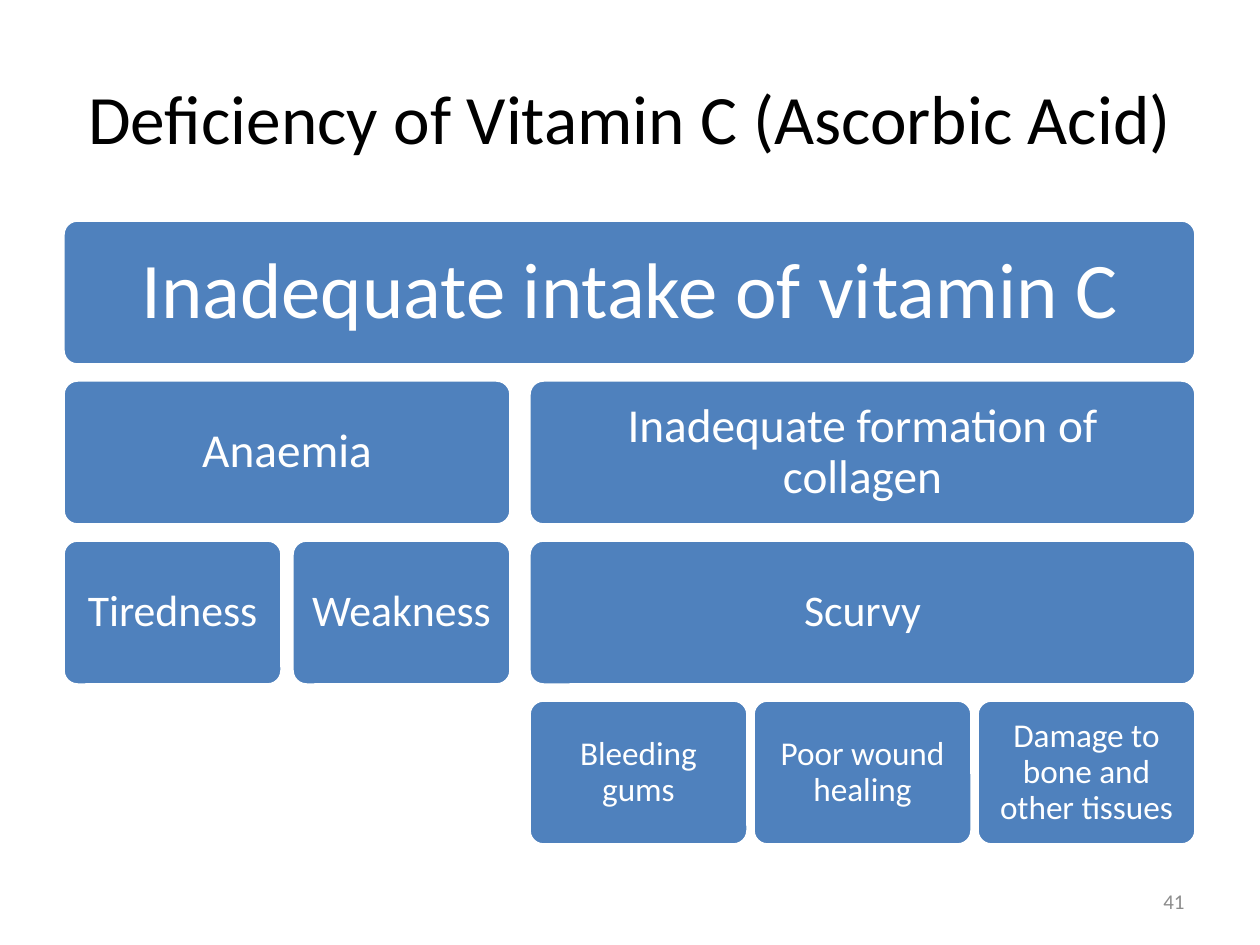
from dataclasses import dataclass
from typing import Any

import pptx
import pptx.dml.color
import pptx.enum.shapes
import pptx.enum.text
import pptx.util

EMU_PER_PX = 914400 / 126
ALIGN = pptx.enum.text.PP_ALIGN

# Grid of the hierarchy, in px
LEFT, TOP = 63, 220
ROW_PITCH, BOX_HEIGHT = 160, 145
LEAF_WIDTH = 219
SYMPTOM_PITCH, DAMAGE_PITCH = 229, 224
RIGHT_BRANCH = 529
ANAEMIA_WIDTH = SYMPTOM_PITCH + LEAF_WIDTH
COLLAGEN_WIDTH = 2 * DAMAGE_PITCH + LEAF_WIDTH
FULL_WIDTH = RIGHT_BRANCH + COLLAGEN_WIDTH - LEFT

# Font size (pt) and text inset (px) of each level
LEVEL_SIZES = (45, 27, 25, 19)
LEVEL_INSETS = (24, 14, 13, 10)


@dataclass
class Cause:
    text: str
    level: int
    left: int
    width: int


CAUSES = [
    Cause("Inadequate intake of vitamin C", 0, LEFT, FULL_WIDTH),
    Cause("Anaemia", 1, LEFT, ANAEMIA_WIDTH),
    Cause("Inadequate formation of collagen", 1, RIGHT_BRANCH, COLLAGEN_WIDTH),
    *(Cause(text, 2, LEFT + i * SYMPTOM_PITCH, LEAF_WIDTH)
      for i, text in enumerate(("Tiredness", "Weakness"))),
    Cause("Scurvy", 2, RIGHT_BRANCH, COLLAGEN_WIDTH),
    *(Cause(text, 3, RIGHT_BRANCH + i * DAMAGE_PITCH, LEAF_WIDTH)
      for i, text in enumerate(("Bleeding gums", "Poor wound healing",
                                "Damage to bone and other tissues"))),
]


def px(length: int) -> pptx.util.Emu:
    return pptx.util.Emu(round(length * EMU_PER_PX))


def colour(hex_value: str) -> pptx.dml.color.RGBColor:
    return pptx.dml.color.RGBColor.from_string(hex_value)


def apply_format(target: Any, values: dict[str, Any]) -> None:
    for name, value in values.items():
        setattr(target, name, value)


def write_text(shape: Any, text: str, size: float, hex_value: str,
               align: Any = ALIGN.CENTER) -> None:
    frame = shape.text_frame
    frame.text = text
    apply_format(frame, {
        "word_wrap": True,
        "auto_size": pptx.enum.text.MSO_AUTO_SIZE.NONE,
        "vertical_anchor": pptx.enum.text.MSO_ANCHOR.MIDDLE,
    })
    paragraph = frame.paragraphs[0]
    paragraph.alignment = align
    font = paragraph.runs[0].font
    apply_format(font, {"name": "Calibri", "size": pptx.util.Pt(size)})
    font.color.rgb = colour(hex_value)


def draw_cause(slide: Any, cause: Cause) -> None:
    box = slide.shapes.add_shape(
        pptx.enum.shapes.MSO_SHAPE.ROUNDED_RECTANGLE,
        px(cause.left), px(TOP + cause.level * ROW_PITCH),
        px(cause.width), px(BOX_HEIGHT))
    box.adjustments[0] = 0.1
    box.shadow.inherit = False
    box.fill.solid()
    box.fill.fore_color.rgb = colour("4F81BD")
    box.line.color.rgb = colour("FFFFFF")
    box.line.width = pptx.util.Pt(2)
    write_text(box, cause.text, LEVEL_SIZES[cause.level], "FFFFFF")
    inset = px(LEVEL_INSETS[cause.level])
    apply_format(box.text_frame, {
        f"margin_{side}": inset for side in ("left", "top", "right", "bottom")})
    box.text_frame.paragraphs[0].line_spacing = 0.9


def main() -> None:
    deck = pptx.Presentation()
    apply_format(deck, {"slide_width": px(1260), "slide_height": px(945)})
    slide = deck.slides.add_slide(deck.slide_layouts[5])

    # Title
    title = slide.shapes.title
    apply_format(title, {"left": px(63), "top": px(38),
                         "width": px(1134), "height": px(157)})
    write_text(title, "Deficiency of Vitamin C (Ascorbic Acid)", 39.6, "000000")

    # Hierarchy of causes and effects
    for cause in CAUSES:
        draw_cause(slide, cause)

    # Slide number
    number = slide.shapes.add_textbox(px(903), px(876), px(294), px(50))
    write_text(number, "41", 12, "8C8C8C", ALIGN.RIGHT)

    deck.save("out.pptx")


if __name__ == "__main__":
    main()
